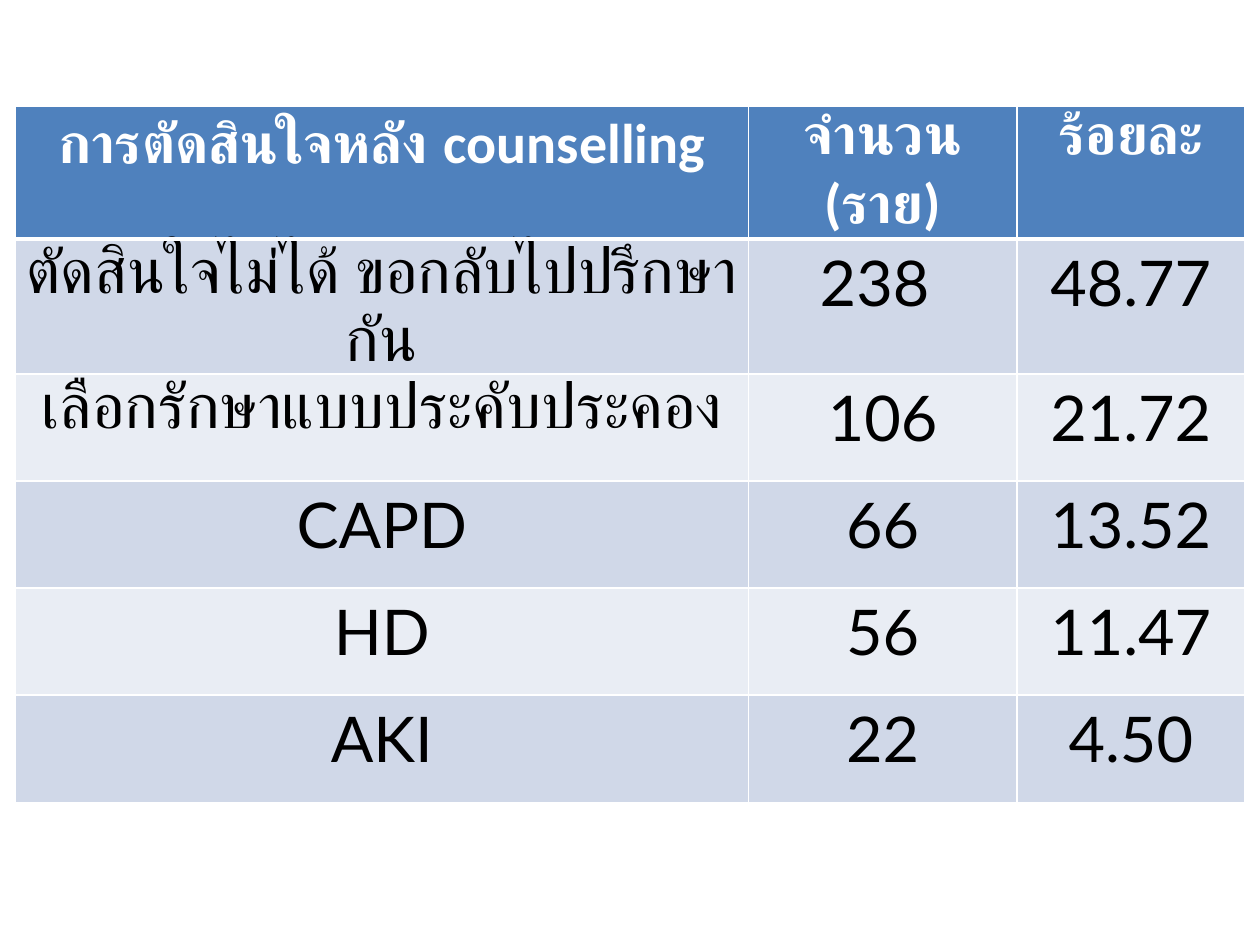
from dataclasses import dataclass

from lxml import etree
from pptx import Presentation
from pptx.dml.color import RGBColor
from pptx.enum import text
from pptx.oxml import ns
from pptx.util import Inches, Pt


@dataclass(frozen=True)
class Theme:
    """Colours, fonts and sizes of the slide."""
    header: str = "4F81BD"
    bands: tuple = ("D0D8E8", "E9EDF4")
    white: str = "FFFFFF"
    black: str = "000000"
    thai_font: str = "Calibri"
    body_font: str = "Lato"
    header_size: int = 32
    body_size: int = 36
    spacing: float = 1.07


THEME = Theme()
COLUMN_WIDTHS = (5.82, 2.13, 1.81)
ROWS = (
    ("การตัดสินใจหลัง counselling", "จำนวน (ราย)", "ร้อยละ"),
    ("ตัดสินใจไม่ได้ ขอกลับไปปรึกษากัน", "238 ", "48.77"),
    ("เลือกรักษาแบบประคับประคอง", "106", "21.72"),
    ("CAPD", "66", "13.52"),
    ("HD", "56", "11.47"),
    ("AKI", "22", "4.50"),
)


def set_borders(cell, bottom):
    """Draw white cell borders with the given bottom width in points."""
    props = cell._tc.get_or_add_tcPr()
    for i, (side, width) in enumerate((("L", 1), ("R", 1), ("T", 1), ("B", bottom))):
        line = etree.Element(ns.qn(f"a:ln{side}"), w=str(Pt(width)))
        fill = etree.SubElement(line, ns.qn("a:solidFill"))
        etree.SubElement(fill, ns.qn("a:srgbClr"), val=THEME.white)
        props.insert(i, line)


def fill_cell(cell, words, fill, color, size, font, bold):
    """Write one centred, filled cell."""
    cell.margin_left = cell.margin_right = Inches(0.07)
    cell.margin_top = cell.margin_bottom = 0
    cell.fill.solid()
    cell.fill.fore_color.rgb = RGBColor.from_string(fill)
    p = cell.text_frame.paragraphs[0]
    p.alignment = text.PP_ALIGN.CENTER
    p.line_spacing = THEME.spacing
    r = p.add_run()
    r.text = words
    r.font.name = font
    r.font.size = Pt(size)
    r.font.bold = bold
    r.font.color.rgb = RGBColor.from_string(color)


def add_decision_table(s, left, top, width, height):
    """Place the table of decisions after counselling in its box."""
    table = s.shapes.add_table(len(ROWS), len(COLUMN_WIDTHS), left, top, width, height).table
    for column, share in zip(table.columns, COLUMN_WIDTHS):
        column.width = int(width * share / sum(COLUMN_WIDTHS))
    for i, row in enumerate(ROWS):
        for j, words in enumerate(row):
            cell = table.cell(i, j)
            if i == 0:
                fill_cell(cell, words, THEME.header, THEME.white,
                          THEME.header_size, THEME.thai_font, True)
            else:
                thai = j == 0 and not words.isascii()
                fill_cell(cell, words, THEME.bands[(i - 1) % 2], THEME.black, THEME.body_size,
                          THEME.thai_font if thai else THEME.body_font, False)
            set_borders(cell, 3 if i == 0 else 1)


def main():
    """Build and save the slide."""
    prs = Presentation()
    prs.slide_width, prs.slide_height = Inches(10), Inches(7.5)
    s = prs.slides.add_slide(prs.slide_layouts[6])
    add_decision_table(s, Inches(0.12), Inches(0.84), Inches(9.76), Inches(5.1))
    prs.save("out.pptx")


if __name__ == "__main__":
    main()
